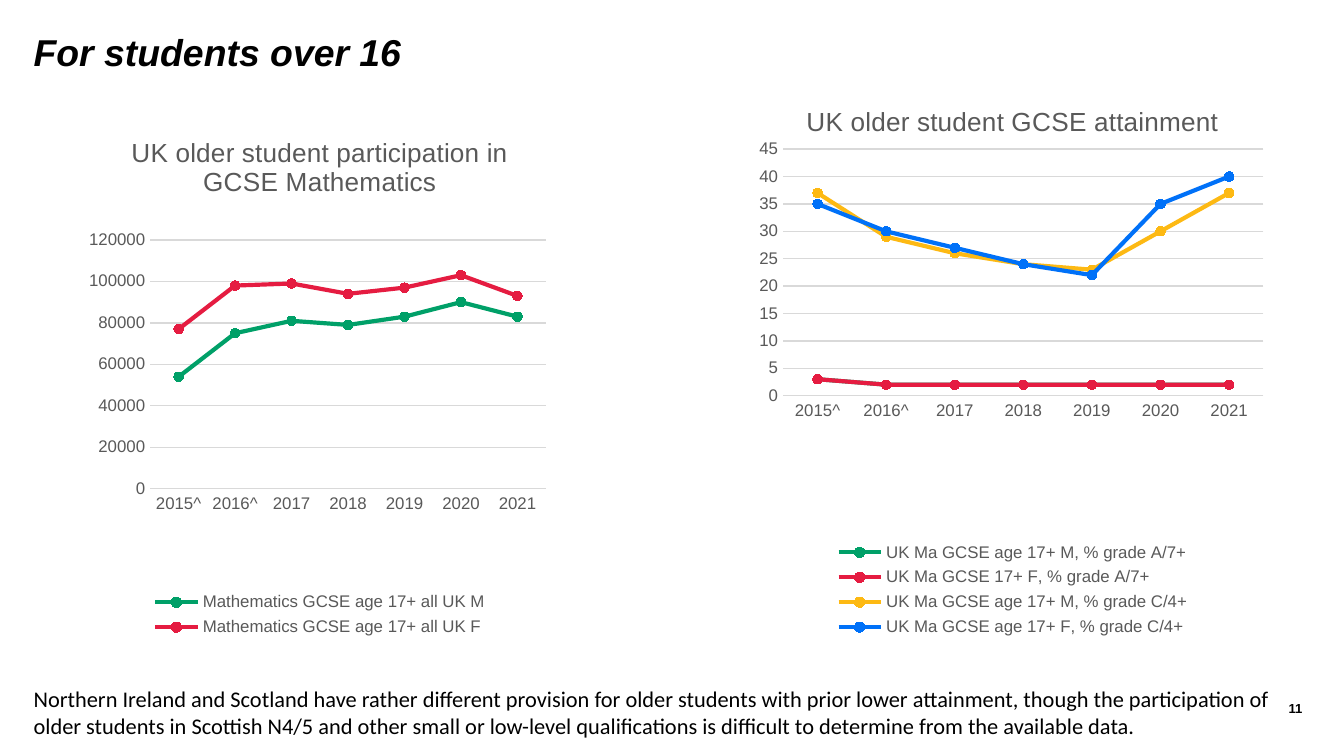
"""Build a slide with two line charts on GCSE Mathematics for students over 16."""
from pptx import Presentation
from pptx.chart.data import CategoryChartData
from pptx.dml.color import RGBColor
from pptx.enum.chart import XL_CHART_TYPE, XL_LEGEND_POSITION, XL_MARKER_STYLE, XL_TICK_MARK
from pptx.enum.text import MSO_ANCHOR, PP_ALIGN
from pptx.oxml import parse_xml
from pptx.oxml.ns import nsdecls
from pptx.util import Inches, Pt

LINE_MARKERS = XL_CHART_TYPE.LINE_MARKERS
BOTTOM = XL_LEGEND_POSITION.BOTTOM
CIRCLE = XL_MARKER_STYLE.CIRCLE
NO_TICK = XL_TICK_MARK.NONE
TOP = MSO_ANCHOR.TOP
LEFT, RIGHT = PP_ALIGN.LEFT, PP_ALIGN.RIGHT

WIDTH = 10
HEIGHT = WIDTH * 9 / 16
MARGIN = 0.25
COLORS = {"black": "000000", "grey": "595959", "grid": "D9D9D9",
          "green": "00A068", "red": "E51C41", "yellow": "FDB913", "blue": "0071F8"}
SERIES_COLORS = ["green", "red", "yellow", "blue"]

TITLE = "For students over 16"
NOTE = ("Northern Ireland and Scotland have rather different provision for older students "
        "with prior lower attainment, though the participation of older students in Scottish "
        "N4/5 and other small or low-level qualifications is difficult to determine from the "
        "available data.")
PAGE_NUMBER = "11"
YEARS = ["2015^", "2016^", "2017", "2018", "2019", "2020", "2021"]
CHARTS = [
    {"title": "UK older student participation in GCSE Mathematics",
     "box": (0.47, 0.84, 3.82, 3.94),
     "plot": (0.17, 0.24, 0.77, 0.47),
     "scale": (120000, 20000),
     "series": {
         "Mathematics GCSE age 17+ all UK M": (54000, 75000, 81000, 79000, 83000, 90000, 83000),
         "Mathematics GCSE age 17+ all UK F": (77000, 98000, 99000, 94000, 97000, 103000, 93000)}},
    {"title": "UK older student GCSE attainment",
     "box": (5.55, 0.61, 3.97, 4.17),
     "plot": (0.07, 0.12, 0.9, 0.44),
     "scale": (45, 5),
     "series": {
         "UK Ma GCSE age 17+ M, % grade A/7+": (3, 2, 2, 2, 2, 2, 2),
         "UK Ma GCSE 17+ F, % grade A/7+": (3, 2, 2, 2, 2, 2, 2),
         "UK Ma GCSE age 17+ M, % grade C/4+": (37, 29, 26, 24, 23, 30, 37),
         "UK Ma GCSE age 17+ F, % grade C/4+": (35, 30, 27, 24, 22, 35, 40)}},
]


def rgb(name):
    return RGBColor.from_string(COLORS[name])


def set_font(font, size, color="black", name="Arial", bold=False, italic=False):
    font.size, font.name, font.bold, font.italic = Pt(size), name, bold, italic
    font.color.rgb = rgb(color)


def write_text(shape, text, box, align=LEFT, line_spacing=None, **font_format):
    shape.left, shape.top, shape.width, shape.height = map(Inches, box)
    frame = shape.text_frame
    frame.word_wrap, frame.vertical_anchor = True, TOP
    frame.margin_left = frame.margin_right = frame.margin_top = frame.margin_bottom = 0
    paragraph = frame.paragraphs[0]
    paragraph.alignment, paragraph.line_spacing = align, line_spacing
    run = paragraph.add_run()
    run.text = text
    set_font(run.font, **font_format)


def place_plot(chart, shares):
    values = "".join(f'<c:{tag} val="{share}"/>' for tag, share in zip("xywh", shares))
    layout = parse_xml(
        f'<c:layout {nsdecls("c")}><c:manualLayout><c:layoutTarget val="inner"/>'
        f'<c:xMode val="edge"/><c:yMode val="edge"/>{values}</c:manualLayout></c:layout>')
    plot_area = chart.element.chart.plotArea
    for old_layout in plot_area.findall(layout.tag):
        plot_area.remove(old_layout)
    plot_area.insert(0, layout)


def style_axes(chart, maximum, step):
    for axis in (chart.category_axis, chart.value_axis):
        axis.major_tick_mark = axis.minor_tick_mark = NO_TICK
        set_font(axis.tick_labels.font, 9, "grey")
    value_axis = chart.value_axis
    value_axis.minimum_scale, value_axis.maximum_scale = 0, maximum
    value_axis.major_unit = step
    value_axis.format.line.fill.background()
    for line in (chart.category_axis.format.line, value_axis.major_gridlines.format.line):
        line.color.rgb, line.width = rgb("grid"), Pt(0.75)


def add_line_chart(slide, title, box, plot, scale, series):
    data = CategoryChartData(number_format="General")
    data.categories = YEARS
    for name, values in series.items():
        data.add_series(name, values)
    chart = slide.shapes.add_chart(LINE_MARKERS, *map(Inches, box), data).chart
    set_font(chart.font, 10)
    chart.has_title = True
    chart.chart_title.include_in_layout = False
    paragraph = chart.chart_title.text_frame.paragraphs[0]
    run = paragraph.add_run()
    run.text = title
    set_font(run.font, 14, "grey")
    chart.has_legend = True
    chart.legend.position, chart.legend.include_in_layout = BOTTOM, False
    set_font(chart.legend.font, 9, "grey")
    style_axes(chart, *scale)
    place_plot(chart, plot)
    chart.plots[0].vary_by_categories = False
    for line_series, color in zip(chart.plots[0].series, SERIES_COLORS):
        line_series.smooth = False
        line_series.format.line.color.rgb = rgb(color)
        line_series.format.line.width = Pt(2.25)
        marker = line_series.marker
        marker.style, marker.size = CIRCLE, 5
        marker.format.fill.solid()
        marker.format.fill.fore_color.rgb = rgb(color)
        marker.format.line.color.rgb = rgb(color)


def main():
    presentation = Presentation()
    presentation.slide_width, presentation.slide_height = Inches(WIDTH), Inches(HEIGHT)
    slide = presentation.slides.add_slide(presentation.slide_layouts[5])
    write_text(slide.shapes.title, TITLE, (MARGIN, 0.27, 9.23, 0.76),
               line_spacing=Pt(20), size=20, bold=True, italic=True)
    for chart in CHARTS:
        add_line_chart(slide, **chart)
    write_text(slide.shapes.add_textbox(0, 0, 0, 0), NOTE, (MARGIN, 5.1, 9.45, 0.3),
               size=12, name="Calibri")
    write_text(slide.shapes.add_textbox(0, 0, 0, 0), PAGE_NUMBER, (8.7, 5.21, 0.99, 0.3),
               align=RIGHT, size=7, bold=True)
    presentation.save("out.pptx")


if __name__ == "__main__":
    main()
